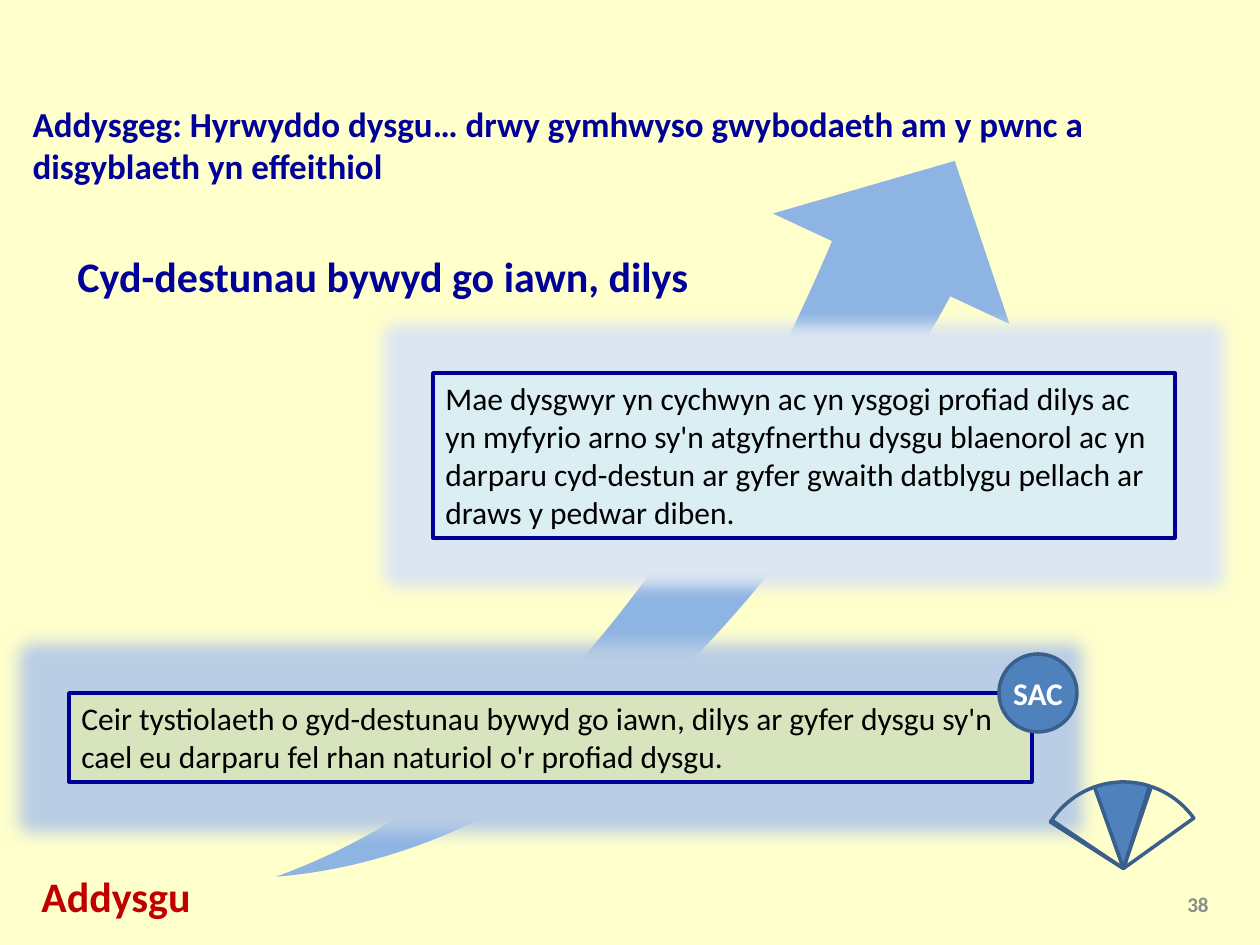
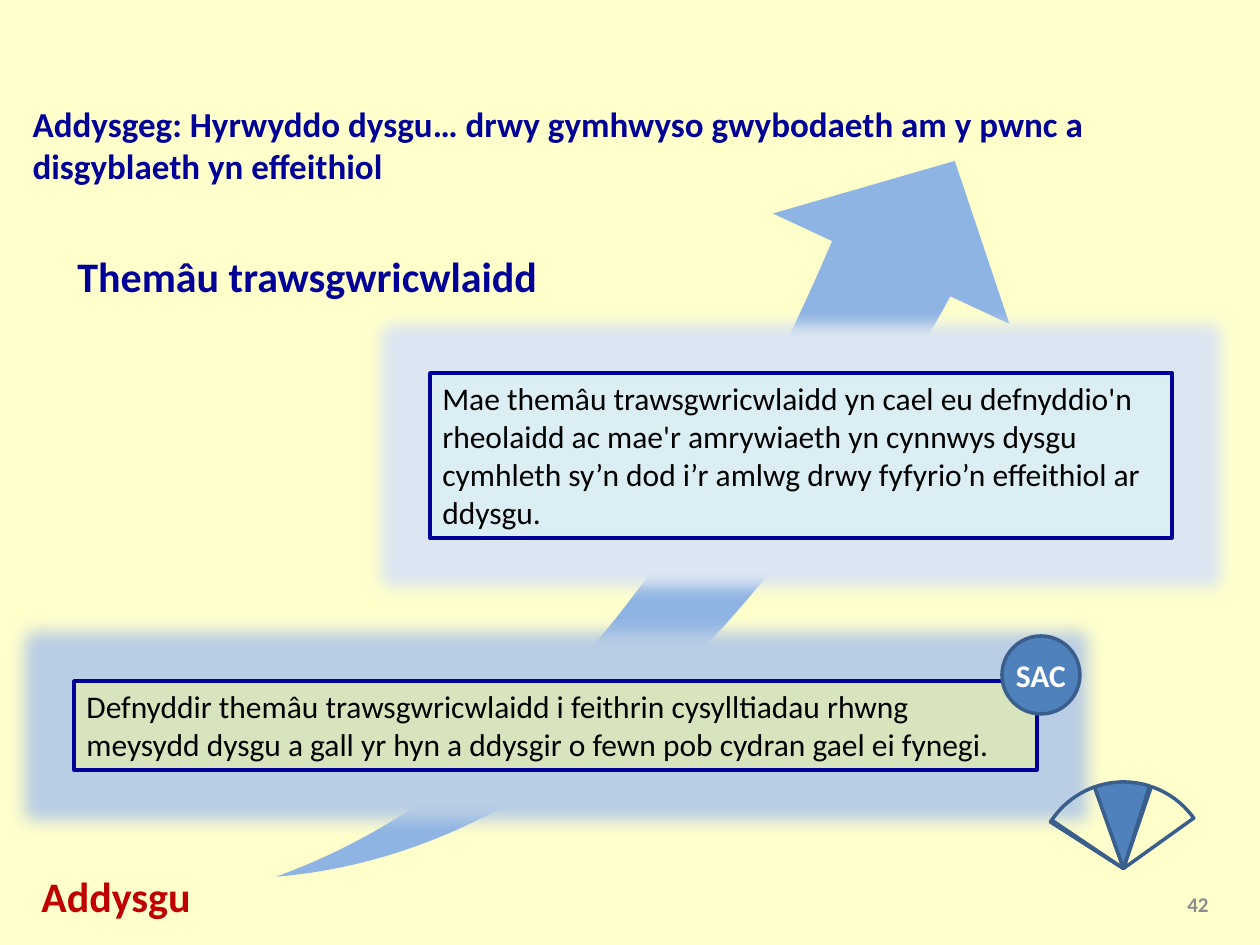
from dataclasses import dataclass
from typing import NamedTuple

from lxml.etree import SubElement
from pptx import Presentation
from pptx.dml.color import RGBColor
from pptx.enum.shapes import MSO_SHAPE
from pptx.enum.text import MSO_ANCHOR, MSO_AUTO_SIZE, PP_ALIGN
from pptx.oxml.ns import qn
from pptx.util import Emu, Pt

EMU_PER_PX = 914400 / 126
FONT = "Calibri"
COLORS = {
    "background": "FFFFCC",
    "navy": "000099",
    "red": "C00000",
    "black": "000000",
    "white": "FFFFFF",
    "grey": "8C8C8C",
    "arrow": "8EB4E3",
    "blue": "4F81BD",
    "blue_edge": "3A5F8C",
    "green": "D7E4BD",
    "green_glow": "B9CDE5",
    "aqua": "DBEEF4",
    "aqua_glow": "DCE6F2",
}
HEADING = ("Addysgeg: Hyrwyddo dysgu… drwy gymhwyso gwybodaeth am y pwnc "
           "a disgyblaeth yn effeithiol")


class Box(NamedTuple):
    left: int
    top: int
    width: int
    height: int


class TextStyle(NamedTuple):
    size: int
    color: str
    bold: bool = True
    align: PP_ALIGN = PP_ALIGN.LEFT
    anchor: MSO_ANCHOR = MSO_ANCHOR.TOP


class Sector(NamedTuple):
    """Part of the fan, from start to end in degrees."""
    start: float
    end: float
    fill: str | None = None


@dataclass
class Panel:
    box: Box
    text: str


@dataclass
class Topic:
    name: str
    number: str
    name_width: int
    start: Panel
    goal: Panel
    badge: Box


TITLE = TextStyle(20, "navy")
TOPIC_NAME = TextStyle(24, "navy")
STAGE = TextStyle(24, "red")
BODY = TextStyle(18, "black", bold=False)
BADGE = TextStyle(18, "white", align=PP_ALIGN.CENTER, anchor=MSO_ANCHOR.MIDDLE)
NUMBER = TextStyle(12, "grey", align=PP_ALIGN.RIGHT, anchor=MSO_ANCHOR.MIDDLE)

FAN_BOX = Box(1037, 782, 173, 173)
FAN_ROTATION = 51.1
FAN = [
    Sector(161.56, 162.84),
    Sector(161.36, 199.46),
    Sector(199.28, 236.43, "blue"),
    Sector(237.68, 273.28),
]

TOPICS = [
    Topic(
        "Cyd-destunau bywyd go iawn, dilys", "38", 664,
        Panel(Box(69, 693, 963, 89),
              "Ceir tystiolaeth o gyd-destunau bywyd go iawn, dilys ar gyfer "
              "dysgu sy'n cael eu darparu fel rhan naturiol o'r profiad dysgu."),
        Panel(Box(433, 373, 742, 165),
              "Mae dysgwyr yn cychwyn ac yn ysgogi profiad dilys ac yn myfyrio "
              "arno sy'n atgyfnerthu dysgu blaenorol ac yn darparu cyd-destun "
              "ar gyfer gwaith datblygu pellach ar draws y pedwar diben."),
        Box(999, 654, 78, 78),
    ),
    Topic(
        "Themâu trawsgwricwlaidd", "42", 625,
        Panel(Box(74, 681, 963, 89),
              "Defnyddir themâu trawsgwricwlaidd i feithrin cysylltiadau rhwng "
              "meysydd dysgu a gall yr hyn a ddysgir o fewn pob cydran gael ei "
              "fynegi."),
        Panel(Box(430, 373, 742, 165),
              "Mae themâu trawsgwricwlaidd yn cael eu defnyddio'n rheolaidd ac "
              "mae'r amrywiaeth yn cynnwys dysgu cymhleth sy’n dod i’r amlwg "
              "drwy fyfyrio’n effeithiol ar ddysgu."),
        Box(1002, 636, 78, 78),
    ),
]


def px(n: int) -> Emu:
    return Emu(round(n * EMU_PER_PX))


def rgb(name: str) -> RGBColor:
    return RGBColor.from_string(COLORS[name])


def write(sp, text: str, style: TextStyle) -> None:
    tf = sp.text_frame
    tf.word_wrap = True
    tf.auto_size = MSO_AUTO_SIZE.NONE
    tf.vertical_anchor = style.anchor
    p = tf.paragraphs[0]
    p.alignment = style.align
    r = p.add_run()
    r.text = text
    r.font.name = FONT
    r.font.size = Pt(style.size)
    r.font.bold = style.bold
    r.font.color.rgb = rgb(style.color)


def add_label(s, box: Box, text: str, style: TextStyle) -> None:
    write(s.shapes.add_textbox(*map(px, box)), text, style)


def add_figure(shapes, kind: MSO_SHAPE, box: Box, fill: str | None,
               line: str | None = None):
    sp = shapes.add_shape(kind, *map(px, box))
    sp.shadow.inherit = False
    if fill:
        sp.fill.solid()
        sp.fill.fore_color.rgb = rgb(fill)
    else:
        sp.fill.background()
    if line:
        sp.line.color.rgb = rgb(line)
        sp.line.width = Pt(2)
    else:
        sp.line.fill.background()
    return sp


def add_glow(sp, color: str) -> None:
    effects = sp._element.spPr.find(qn("a:effectLst"))
    glow = SubElement(effects, qn("a:glow"), rad=str(Pt(18)))
    SubElement(glow, qn("a:srgbClr"), val=COLORS[color])


def add_panel(s, panel: Panel, color: str) -> None:
    sp = add_figure(s.shapes, MSO_SHAPE.RECTANGLE, panel.box, color, "navy")
    add_glow(sp, f"{color}_glow")
    write(sp, panel.text, BODY)


def add_arrow(s) -> None:
    sp = add_figure(s.shapes, MSO_SHAPE.SWOOSH_ARROW,
                    Box(217, 276, 895, 519), "arrow")
    sp.adjustments[0] = sp.adjustments[1] = 0.25
    sp.rotation = 288.6
    sp._element.spPr.find(qn("a:xfrm")).set("flipV", "1")


def add_badge(s, box: Box) -> None:
    sp = add_figure(s.shapes, MSO_SHAPE.OVAL, box, "blue", "blue_edge")
    write(sp, "SAC", BADGE)
    tf = sp.text_frame
    tf.margin_left = tf.margin_right = 0
    tf.margin_top = tf.margin_bottom = px(5)


def add_fan(s) -> None:
    group = s.shapes.add_group_shape()
    for sector in FAN:
        sp = add_figure(group.shapes, MSO_SHAPE.PIE, FAN_BOX, sector.fill,
                        "blue_edge")
        # An angle counts 60000 units per degree; adjustments divide by 100000.
        sp.adjustments[0] = sector.start * 0.6
        sp.adjustments[1] = sector.end * 0.6
        sp.rotation = FAN_ROTATION


def add_title(s) -> None:
    sp = s.shapes.title
    sp.left, sp.top, sp.width, sp.height = map(px, Box(20, 96, 1137, 97))
    write(sp, HEADING, TITLE)


def add_topic_slide(prs, topic: Topic) -> None:
    s = prs.slides.add_slide(prs.slide_layouts.get_by_name("Title Only"))
    add_title(s)
    add_arrow(s)
    add_label(s, Box(65, 244, topic.name_width, 63), topic.name, TOPIC_NAME)
    add_panel(s, topic.start, "green")
    add_panel(s, topic.goal, "aqua")
    add_label(s, Box(927, 879, 294, 50), topic.number, NUMBER)
    add_label(s, Box(29, 864, 451, 63), "Addysgu", STAGE)
    add_badge(s, topic.badge)
    add_fan(s)


def main() -> None:
    prs = Presentation()
    prs.slide_width, prs.slide_height = px(1260), px(945)
    background = prs.slide_master.background.fill
    background.solid()
    background.fore_color.rgb = rgb("background")
    for topic in TOPICS:
        add_topic_slide(prs, topic)
    prs.save("out.pptx")


if __name__ == "__main__":
    main()
